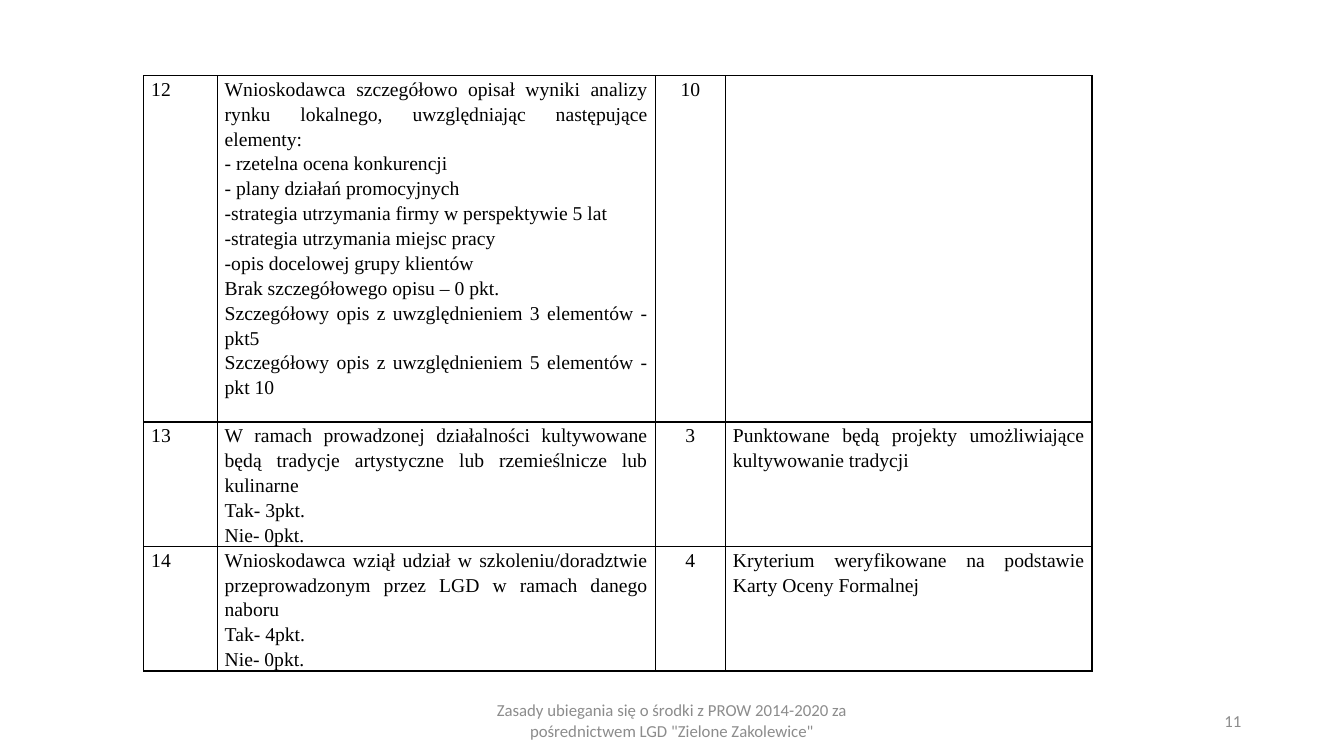
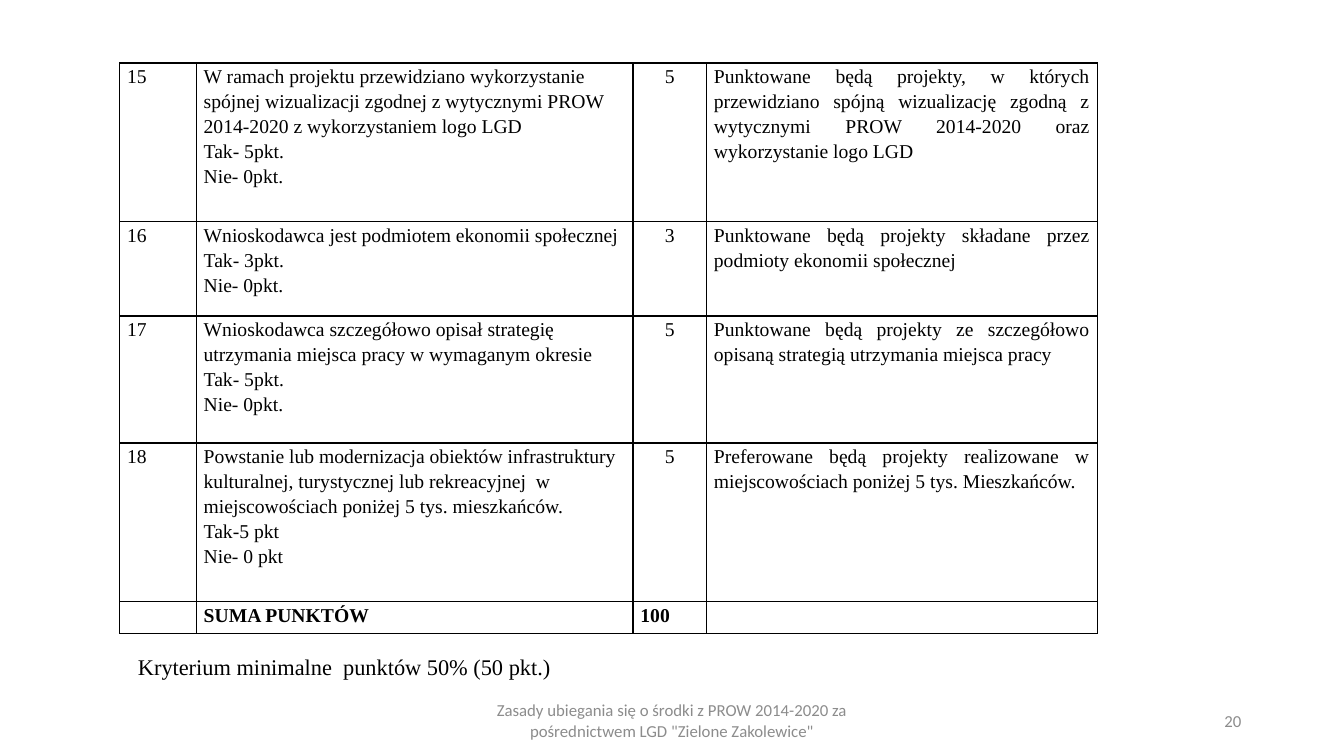
"""Builds two slides with tables of grant scoring criteria."""
from copy import deepcopy

from lxml import etree
from pptx import Presentation
from pptx.dml.color import RGBColor
from pptx.enum.text import MSO_ANCHOR, PP_ALIGN
from pptx.oxml.ns import qn
from pptx.util import Pt

PX = 9525
LEFT, CENTER, RIGHT, JUSTIFY = PP_ALIGN.LEFT, PP_ALIGN.CENTER, PP_ALIGN.RIGHT, PP_ALIGN.JUSTIFY
MIDDLE = MSO_ANCHOR.MIDDLE
BLACK, GREY = "000000", "8C8C8C"
BODY = {"name": "Times New Roman", "size": Pt(14), "bold": False}
TOTAL = {**BODY, "bold": True}
NOTE = {**BODY, "size": Pt(16)}
SMALL = {"name": "Calibri", "size": Pt(12)}
MARGINS = {"margin_left": 7 * PX, "margin_right": 7 * PX, "margin_top": 0, "margin_bottom": 0}
FOOTER = 'Zasady ubiegania się o środki z PROW 2014-2020 za pośrednictwem LGD "Zielone Zakolewice"'
FOOTER_BOXES = {11: (424, 667, 432, 38), 12: (904, 667, 288, 38)}

SLIDES = [
    {
        "number": "11",
        "at": (137, 72),
        "cols": [70, 417, 67, 349],
        "rows": [330, 110, 110],
        "criterion_align": JUSTIFY,
        "note": "",
        "cells": [
            ("12",
             "Wnioskodawca szczegółowo opisał wyniki analizy rynku lokalnego, "
             "uwzględniając następujące elementy:\n"
             "- rzetelna ocena konkurencji\n"
             "- plany działań promocyjnych\n"
             "-strategia utrzymania firmy w perspektywie 5 lat\n"
             "-strategia utrzymania miejsc pracy\n"
             "-opis docelowej grupy klientów\n"
             "Brak szczegółowego opisu – 0 pkt.\n"
             "Szczegółowy opis z uwzględnieniem 3 elementów - pkt5\n"
             "Szczegółowy opis z uwzględnieniem 5 elementów - pkt 10",
             "10", ""),
            ("13",
             "W ramach prowadzonej działalności kultywowane będą tradycje "
             "artystyczne lub rzemieślnicze lub kulinarne\nTak- 3pkt.\nNie- 0pkt.",
             "3", "Punktowane będą projekty umożliwiające kultywowanie tradycji"),
            ("14",
             "Wnioskodawca wziął udział w szkoleniu/doradztwie przeprowadzonym "
             "przez LGD w ramach danego naboru\nTak- 4pkt.\nNie- 0pkt.",
             "4", "Kryterium weryfikowane na podstawie Karty Oceny Formalnej"),
        ],
    },
    {
        "number": "20",
        "at": (114, 60),
        "cols": [73, 416, 70, 372],
        "rows": [151, 90, 121, 151, 30],
        "criterion_align": LEFT,
        "note": "Kryterium minimalne  punktów 50% (50 pkt.)",
        "cells": [
            ("15",
             "W ramach projektu przewidziano wykorzystanie spójnej wizualizacji zgodnej "
             "z wytycznymi PROW 2014-2020 z wykorzystaniem logo LGD\nTak- 5pkt.\nNie- 0pkt.",
             "5",
             "Punktowane będą projekty, w których przewidziano spójną wizualizację "
             "zgodną z wytycznymi PROW 2014-2020 oraz wykorzystanie logo LGD"),
            ("16",
             "Wnioskodawca jest podmiotem ekonomii społecznej\nTak- 3pkt.\nNie- 0pkt.",
             "3", "Punktowane będą projekty składane przez podmioty ekonomii społecznej"),
            ("17",
             "Wnioskodawca szczegółowo opisał strategię utrzymania miejsca pracy "
             "w wymaganym okresie\nTak- 5pkt.\nNie- 0pkt.",
             "5",
             "Punktowane będą projekty ze szczegółowo opisaną strategią utrzymania miejsca pracy"),
            ("18",
             "Powstanie lub modernizacja obiektów infrastruktury kulturalnej, turystycznej "
             "lub rekreacyjnej  w miejscowościach poniżej 5 tys. mieszkańców.\n"
             "Tak-5 pkt\nNie- 0 pkt",
             "5",
             "Preferowane będą projekty realizowane w miejscowościach poniżej 5 tys. Mieszkańców."),
            ("", "SUMA PUNKTÓW", "100", ""),
        ],
    },
]


def write(tf, text, fmt, color, align, spacing=None):
    tf.text = text
    for p in tf.paragraphs:
        p.alignment, p.line_spacing = align, spacing
        for r in p.runs:
            for key, value in fmt.items():
                setattr(r.font, key, value)
            r.font.color.rgb = RGBColor.from_string(color)
        if not p.runs:
            etree.SubElement(p._p, qn("a:endParaRPr"), sz=str(int(fmt["size"].pt * 100)))


def add_borders(cell, color):
    tcPr = cell._tc.get_or_add_tcPr()
    for side in ("lnL", "lnR", "lnT", "lnB"):
        ln = etree.SubElement(tcPr, qn(f"a:{side}"), w=str(Pt(1)))
        fill = etree.SubElement(ln, qn("a:solidFill"))
        etree.SubElement(fill, qn("a:srgbClr"), val=color)


prs = Presentation()
prs.slide_width, prs.slide_height = 1280 * PX, 720 * PX
layout = prs.slide_layouts[6]
footers = [ph for ph in layout.placeholders if ph.placeholder_format.idx in FOOTER_BOXES]
for ph in footers:
    box = FOOTER_BOXES[ph.placeholder_format.idx]
    for key, value in zip(("left", "top", "width", "height"), box):
        setattr(ph, key, value * PX)
    ph.text_frame.vertical_anchor = MIDDLE

for data in SLIDES:
    s = prs.slides.add_slide(layout)
    for ph in footers:
        s.shapes._spTree.append(deepcopy(ph._element))
    for sp in s.placeholders:
        if sp.placeholder_format.idx == 11:
            write(sp.text_frame, FOOTER, SMALL, GREY, CENTER)
        else:
            write(sp.text_frame, data["number"], SMALL, GREY, RIGHT)

    cols, rows = data["cols"], data["rows"]
    box = (*data["at"], sum(cols), sum(rows))
    table = s.shapes.add_table(len(rows), len(cols), *(v * PX for v in box)).table
    table.first_row = table.horz_banding = False
    for column, width in zip(table.columns, cols):
        column.width = width * PX
    for row, height, texts in zip(table.rows, rows, data["cells"]):
        row.height = height * PX
        is_total = not texts[0]
        fmt = TOTAL if is_total else BODY
        aligns = [LEFT] * 4 if is_total else [LEFT, data["criterion_align"], CENTER, JUSTIFY]
        for cell, text, align in zip(row.cells, texts, aligns):
            for key, value in MARGINS.items():
                setattr(cell, key, value)
            add_borders(cell, BLACK)
            cell.fill.background()
            write(cell.text_frame, text, fmt, BLACK, align, 1.15)

    if data["note"]:
        sp = s.shapes.add_textbox(*(v * PX for v in (122, 617, 419, 36)))
        sp.text_frame.word_wrap = False
        write(sp.text_frame, data["note"], NOTE, BLACK, LEFT)

prs.save("out.pptx")
